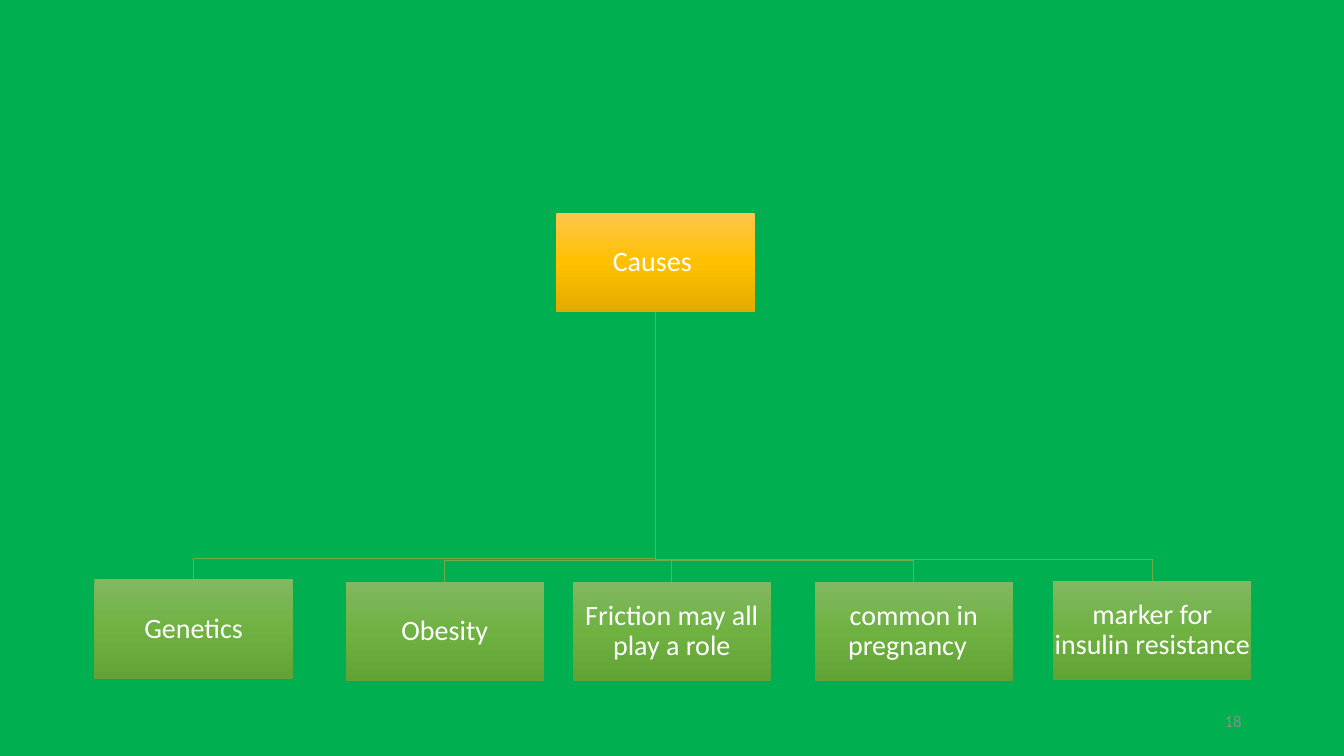
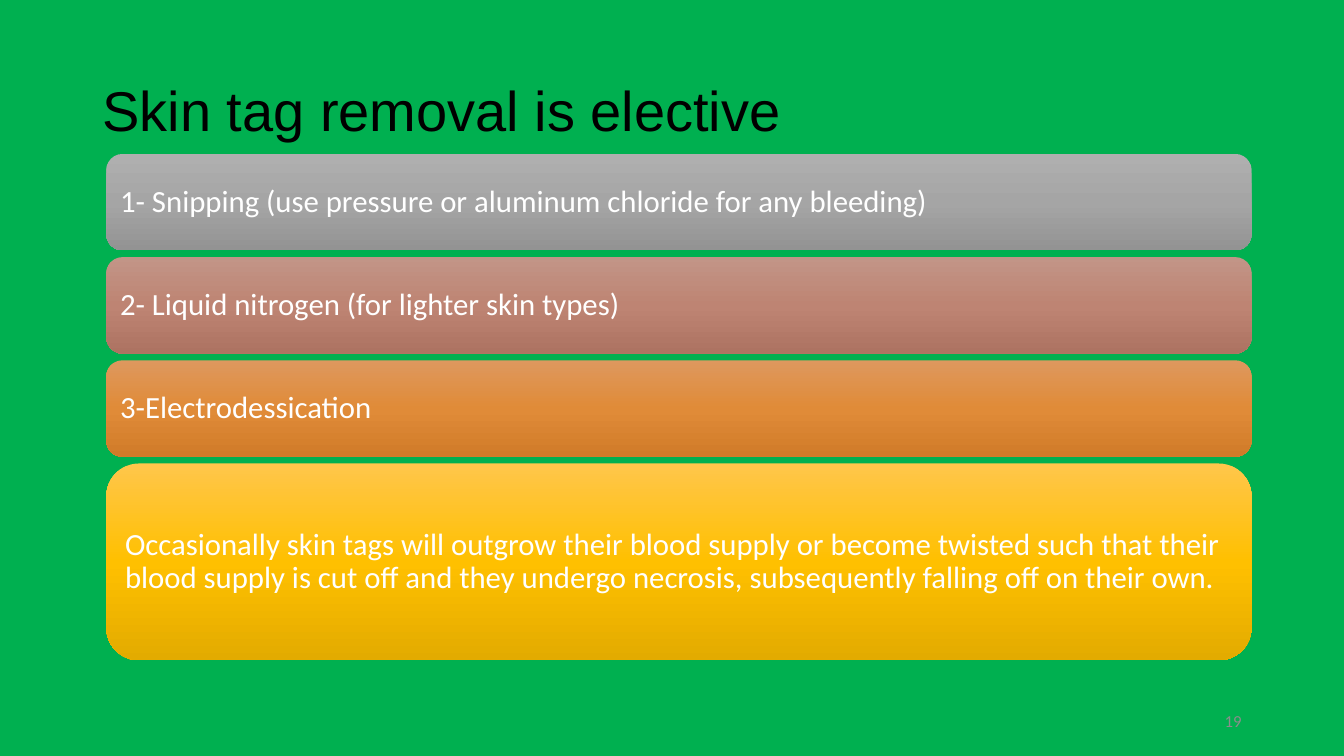
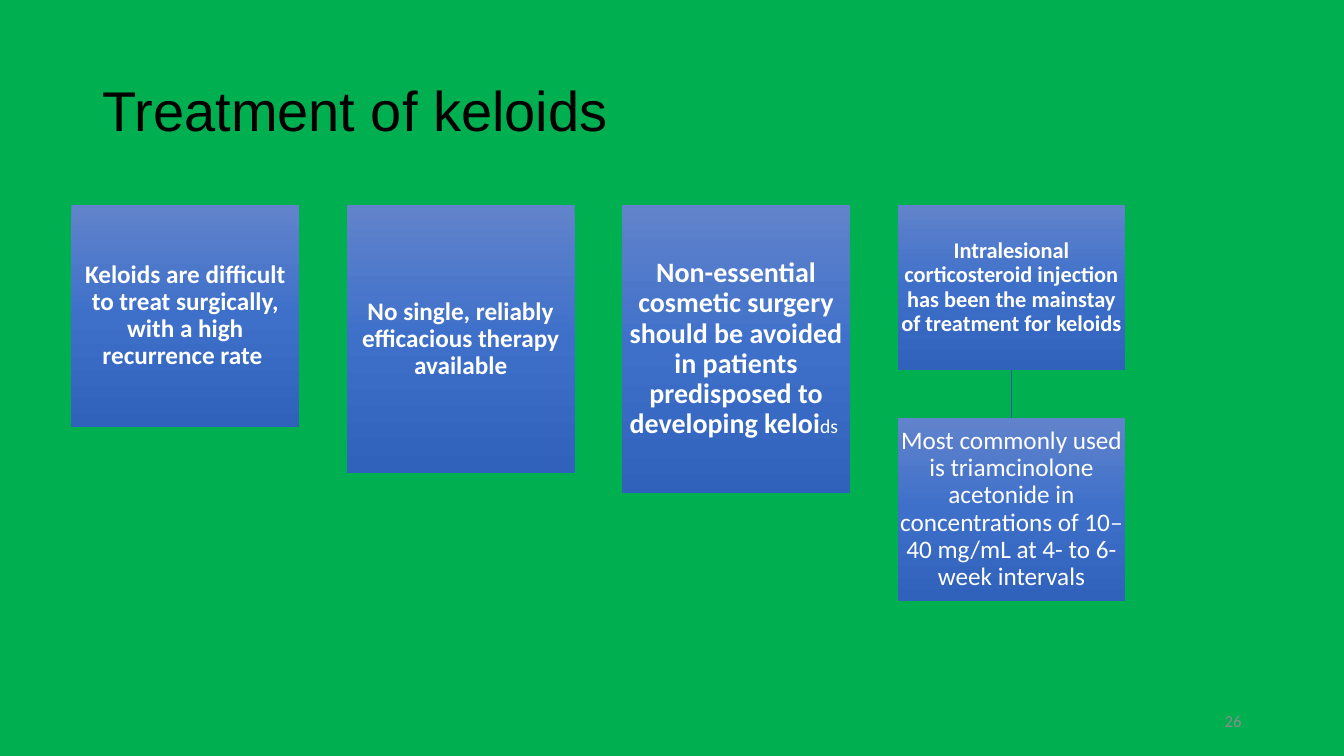
from copy import deepcopy
from dataclasses import dataclass

from lxml.etree import SubElement
from pptx import Presentation
from pptx.dml.color import RGBColor
from pptx.enum.shapes import MSO_CONNECTOR as Connector, MSO_SHAPE as Shape
from pptx.enum.text import MSO_ANCHOR as Anchor, PP_ALIGN as Align
from pptx.oxml.ns import qn
from pptx.util import Cm, Pt

# Shared colours and fonts
BACKGROUND = RGBColor(0x00, 0xB0, 0x50)
WHITE = RGBColor(0xFF, 0xFF, 0xFF)
BLACK = RGBColor(0x00, 0x00, 0x00)
NUMBER_GREY = RGBColor(0x8C, 0x8C, 0x8C)
TREE_LINE = RGBColor(0x70, 0xAD, 0x47)
BLUE_LINE = RGBColor(0x36, 0x5B, 0x9D)
TITLE_FONT = "Arial"
BODY_FONT = "Calibri"

# Gradients from top to bottom
GOLD = (RGBColor(0xFF, 0xC6, 0x4B), RGBColor(0xFF, 0xC0, 0x00), RGBColor(0xE3, 0xAB, 0x00))
GREEN = (RGBColor(0x81, 0xB8, 0x61), RGBColor(0x6F, 0xB2, 0x42), RGBColor(0x62, 0xA3, 0x36))
GREY = (RGBColor(0xAF, 0xAF, 0xAF), RGBColor(0xA5, 0xA5, 0xA5), RGBColor(0x93, 0x93, 0x93))
ROSE = (RGBColor(0xC2, 0x95, 0x87), RGBColor(0xBE, 0x84, 0x73), RGBColor(0xAD, 0x73, 0x62))
ORANGE = (RGBColor(0xDE, 0x98, 0x5E), RGBColor(0xE0, 0x8B, 0x38), RGBColor(0xD0, 0x7B, 0x29))
BLUE = (RGBColor(0x61, 0x83, 0xCB), RGBColor(0x3E, 0x70, 0xCA), RGBColor(0x30, 0x62, 0xBB))

# Connection sites of a rectangle
TOP, BOTTOM = 0, 2


@dataclass
class Piece:
    text: str
    size: int
    bold: bool = False
    italic: bool = False


def style_run(run, size, color, font=BODY_FONT, bold=False, italic=False):
    run.font.name = font
    run.font.size = Pt(size)
    run.font.color.rgb = color
    run.font.bold = bold
    run.font.italic = italic


def paint_gradient(shape, colors):
    shape.fill.gradient()
    shape.fill.gradient_angle = 270
    stop_list = shape.element.spPr.find(qn("a:gradFill")).find(qn("a:gsLst"))
    stop_list.append(deepcopy(stop_list[-1]))
    for index, (stop, color) in enumerate(zip(shape.fill.gradient_stops, colors)):
        stop.position = index / 2
        stop.color.rgb = color


def add_box(slide, left, top, width, height, colors, pieces,
            outline=Shape.RECTANGLE, align=Align.CENTER, inset=0.03):
    box = slide.shapes.add_shape(outline, Cm(left), Cm(top), Cm(width), Cm(height))
    box.shadow.inherit = False
    box.line.fill.background()
    paint_gradient(box, colors)
    frame = box.text_frame
    frame.word_wrap = True
    frame.vertical_anchor = Anchor.MIDDLE
    frame.margin_left = frame.margin_right = Cm(inset)
    frame.margin_top = frame.margin_bottom = Cm(inset)
    paragraph = frame.paragraphs[0]
    paragraph.alignment = align
    paragraph.line_spacing = 0.9
    for piece in pieces:
        run = paragraph.add_run()
        run.text = piece.text
        style_run(run, piece.size, WHITE, bold=piece.bold, italic=piece.italic)
    return box


def middle(box):
    return box.left + box.width // 2


def style_line(line, color):
    line.color.rgb = color
    line.width = Pt(0.5)


def add_branch(slide, parent, child):
    """Draw an open outline that bends just above the child."""
    start_x, start_y = middle(parent), parent.top + parent.height
    end_x, bend_y = middle(child), child.top - Cm(0.54)
    builder = slide.shapes.build_freeform(start_x, start_y)
    builder.add_line_segments(
        [(start_x, bend_y), (end_x, bend_y), (end_x, child.top)], close=False)
    branch = builder.convert_to_shape()
    branch.shadow.inherit = False
    branch.fill.background()
    style_line(branch.line, TREE_LINE)


def add_link(slide, upper, lower, color):
    link = slide.shapes.add_connector(
        Connector.STRAIGHT, middle(upper), upper.top + upper.height, middle(lower), lower.top)
    link.begin_connect(upper, BOTTOM)
    link.end_connect(lower, TOP)
    style_line(link.line, color)
    SubElement(link.element.spPr, qn("a:effectLst"))


def add_title(slide, text):
    title = slide.shapes.title
    title.left, title.top, title.width, title.height = Cm(2.33), Cm(1.01), Cm(29.21), Cm(3.68)
    frame = title.text_frame
    frame.text = text
    frame.vertical_anchor = Anchor.MIDDLE
    paragraph = frame.paragraphs[0]
    paragraph.alignment = Align.LEFT
    paragraph.line_spacing = 0.9
    style_run(paragraph.runs[0], 40, BLACK, TITLE_FONT)


def add_slide_number(slide, number):
    box = slide.shapes.add_textbox(Cm(23.92), Cm(17.66), Cm(7.62), Cm(1.01))
    frame = box.text_frame
    frame.word_wrap = True
    frame.vertical_anchor = Anchor.MIDDLE
    frame.text = str(number)
    frame.paragraphs[0].alignment = Align.RIGHT
    style_run(frame.paragraphs[0].runs[0], 12, NUMBER_GREY)


def build_causes(slide):
    width, height = 5, 2.5
    root = add_box(slide, 14.02, 5.37, width, height, GOLD, [Piece("Causes ", 20)])
    causes = [
        ("Genetics", 2.38, 14.6),
        ("Obesity", 8.71, 14.66),
        ("Friction may all play a role", 14.43, 14.66),
        ("common in pregnancy  ", 20.53, 14.66),
        ("marker for insulin resistance", 26.54, 14.64),
    ]
    for text, left, top in causes:
        cause = add_box(slide, left, top, width, height, GREEN, [Piece(text, 20)])
        add_branch(slide, root, cause)


def build_removal(slide):
    add_title(slide, "Skin tag removal is elective")
    gap, top = 0.17, 3.88
    rows = [
        ("1- Snipping (use pressure or aluminum chloride for any bleeding)", GREY, 2.43),
        ("2- Liquid nitrogen (for lighter skin types)", ROSE, 2.43),
        ("3-Electrodessication", ORANGE, 2.43),
        ("Occasionally skin tags will outgrow their blood supply or become twisted such that "
         "their blood supply is cut off and they undergo necrosis, subsequently falling off "
         "on their own.", GOLD, 4.96),
    ]
    for text, colors, height in rows:
        add_box(slide, 2.68, top, 28.86, height, colors, [Piece(text, 22)],
                Shape.ROUNDED_RECTANGLE, Align.LEFT, 0.23)
        top += height + gap


def build_keloids(slide):
    add_title(slide, "Treatment of keloids")
    left, top, width, gap = 1.8, 5.17, 5.74, 1.2
    columns = [
        (5.58, [Piece("Keloids are difficult to treat surgically, with a high "
                      "recurrence rate ", 18, True)]),
        (6.75, [Piece("No single, reliably efficacious therapy available", 18, True)]),
        (7.26, [Piece("Non-essential cosmetic surgery should be avoided in patients "
                      "predisposed to developing keloi", 20, True), Piece("ds ", 14)]),
        (4.16, [Piece("Intralesional corticosteroid injection has been the mainstay of "
                      "treatment for keloids", 16, True)]),
    ]
    for index, (height, pieces) in enumerate(columns):
        column_left = left + index * (width + gap)
        mainstay = add_box(slide, column_left, top, width, height, BLUE, pieces)
    # Dosage below the last column
    dosage = add_box(slide, column_left, top + height + gap, width, 4.61, BLUE, [
        Piece("Most commonly used is triamcinolone acetonide in concentrations of 10", 18),
        Piece("–", 18, italic=True),
        Piece("40 mg/mL at 4- to 6-week intervals", 18),
    ])
    add_link(slide, mainstay, dosage, BLUE_LINE)


def main():
    prs = Presentation()
    prs.slide_width, prs.slide_height = Cm(33.87), Cm(19.05)
    background = prs.slide_master.background.fill
    background.solid()
    background.fore_color.rgb = BACKGROUND
    title_only, blank = prs.slide_layouts[5], prs.slide_layouts[6]
    for layout, build, number in [
        (blank, build_causes, 18),
        (title_only, build_removal, 19),
        (title_only, build_keloids, 26),
    ]:
        slide = prs.slides.add_slide(layout)
        build(slide)
        add_slide_number(slide, number)
    prs.save("out.pptx")


if __name__ == "__main__":
    main()
